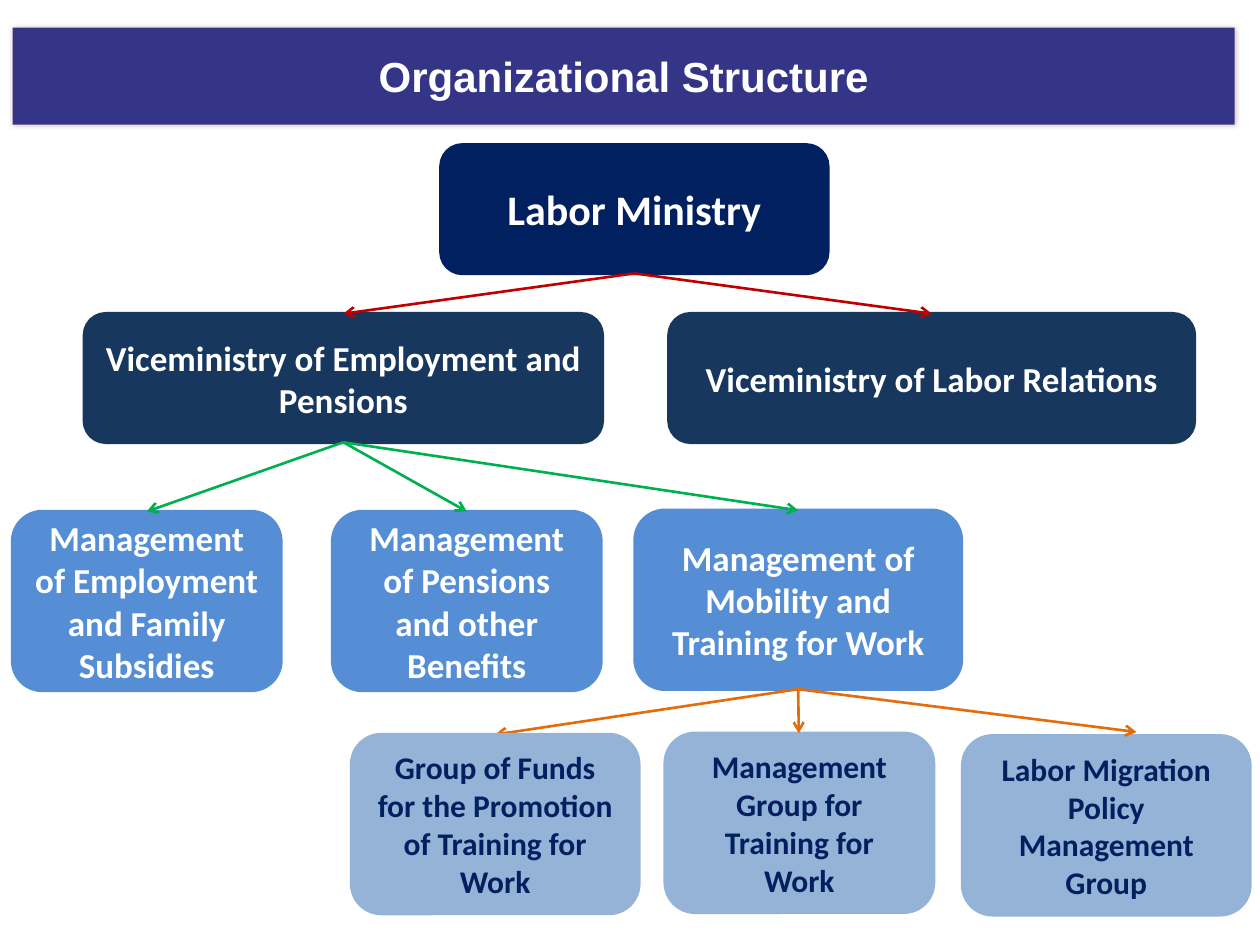
from dataclasses import dataclass
from typing import Optional

from lxml.etree import SubElement
from pptx import Presentation
from pptx.dml.color import RGBColor
from pptx.enum.shapes import MSO_CONNECTOR, MSO_SHAPE
from pptx.enum.text import MSO_ANCHOR, MSO_AUTO_SIZE, PP_ALIGN
from pptx.oxml.ns import qn
from pptx.util import Inches, Pt

COLS, ROWS = 100, 75  # square grid cells over the slide
WHITE, NAVY = "FFFFFF", "002060"


@dataclass(frozen=True)
class Level:
    fill: str
    ink: str
    size: int
    link: str = ""  # colour of the arrows to the level below


@dataclass(frozen=True)
class Unit:
    key: str
    text: str
    level: Level
    area: tuple[float, float, float, float]  # column, row, columns, rows
    boss: str = ""
    tip: Optional[tuple[float, float]] = None  # free arrow end
    front: bool = False  # box covers its arrow's tip


TOP = Level(NAVY, WHITE, 24, "C00000")
VICE = Level("17375E", WHITE, 20, "00B050")
AREA = Level("558ED5", WHITE, 20, "E46C0A")
GROUP = Level("95B3D7", NAVY, 18)

UNITS = [
    Unit("labor", "Labor Ministry", TOP, (35, 11.5, 30.7, 10.2)),
    Unit("jobs", "Viceministry of Employment and Pensions", VICE,
         (6.7, 24.9, 41.1, 10.2), "labor"),
    Unit("ties", "Viceministry of Labor Relations", VICE,
         (53.1, 24.9, 41.7, 10.2), "labor"),
    Unit("family", "Management of Employment and Family Subsidies", AREA,
         (1, 40.6, 21.3, 14.2), "jobs"),
    Unit("pension", "Management of Pensions and other Benefits", AREA,
         (26.4, 40.6, 21.3, 14.2), "jobs"),
    Unit("work", "Management of Mobility and Training for Work", AREA,
         (50.4, 40.5, 25.9, 14.2), "jobs"),
    Unit("funds", "Group of Funds for the Promotion of Training for Work", GROUP,
         (27.9, 58.3, 22.8, 14.2), "work", front=True),
    Unit("train", "Management Group for Training for Work", GROUP,
         (52.8, 58.2, 21.3, 14.2), "work", tip=(63.4, 58.2)),
    Unit("move", "Labor Migration Policy Management Group", GROUP,
         (76.4, 58.4, 22.8, 14.2), "work", tip=(90.2, 58.1)),
]

deck = Presentation()
deck.slide_width, deck.slide_height = Inches(10), Inches(7.5)
slide = deck.slides.add_slide(deck.slide_layouts[5])
shapes = slide.shapes


def cells(*marks: float) -> list[int]:
    """Turn alternating columns and rows into slide lengths."""
    sides = (deck.slide_width / COLS, deck.slide_height / ROWS)
    return [round(mark * sides[i % 2]) for i, mark in enumerate(marks)]


def paint(target, tint: str) -> None:
    """Colour a fill, or a font or line through its colour."""
    if hasattr(target, "solid"):
        target.solid()
        target = target.fore_color
    else:
        target = target.color
    target.rgb = RGBColor.from_string(tint)


def write(frame, text: str, font: str, size: int, ink: str) -> None:
    para = frame.paragraphs[0]
    para.alignment = PP_ALIGN.CENTER
    run = para.add_run()
    run.text = text
    run.font.name, run.font.size, run.font.bold = font, Pt(size), True
    paint(run.font, ink)


def draw_box(unit: Unit):
    box = shapes.add_shape(MSO_SHAPE.ROUNDED_RECTANGLE, *cells(*unit.area))
    box.shadow.inherit = False
    paint(box.fill, unit.level.fill)
    paint(box.line, unit.level.fill)
    box.line.width = Pt(2)
    frame = box.text_frame
    frame.word_wrap, frame.vertical_anchor = True, MSO_ANCHOR.MIDDLE
    write(frame, unit.text, "Calibri", unit.level.size, unit.level.ink)
    return box


def draw_link(boss, box, tint: str, tip: Optional[tuple[float, float]]) -> None:
    end = cells(*tip) if tip else (0, 0)
    link = shapes.add_connector(MSO_CONNECTOR.STRAIGHT, 0, 0, *end)
    link.begin_connect(boss, 2)
    if not tip:
        link.end_connect(box, 0)
    paint(link.line, tint)
    link.line.width = Pt(1.5)
    SubElement(link.line._get_or_add_ln(), qn("a:tailEnd"), type="arrow")
    SubElement(link._element.spPr, qn("a:effectLst"))


def draw_banner() -> None:
    bar = shapes.add_shape(MSO_SHAPE.RECTANGLE, *cells(1, 2.2, 97, 7.7))
    paint(bar.fill, "353588")
    bar.line.fill.background()
    bar.shadow.inherit = False
    glow = SubElement(bar._element.spPr.find(qn("a:effectLst")), qn("a:outerShdw"),
                      blurRad=str(Pt(3)), dist="0", dir="5400000", rotWithShape="0")
    tint = SubElement(glow, qn("a:srgbClr"), val="9A403E")
    SubElement(tint, qn("a:alpha"), val="35000")


# Banner, with the title above it
draw_banner()
title = shapes.title
title.left, title.top, title.width, title.height = cells(1, 4, 97, 4)
frame = title.text_frame
frame.margin_left = frame.margin_right = frame.margin_top = frame.margin_bottom = 0
frame.vertical_anchor, frame.auto_size = MSO_ANCHOR.TOP, MSO_AUTO_SIZE.NONE
write(frame, "Organizational Structure", "Arial", 24, WHITE)
shapes._spTree.append(title._element)

# Units, then the arrows from each boss
boxes = {unit.key: draw_box(unit) for unit in UNITS}
levels = {unit.key: unit.level for unit in UNITS}
for unit in UNITS:
    if unit.boss:
        draw_link(boxes[unit.boss], boxes[unit.key], levels[unit.boss].link, unit.tip)
    if unit.front:
        shapes._spTree.append(boxes[unit.key]._element)

deck.save("out.pptx")
